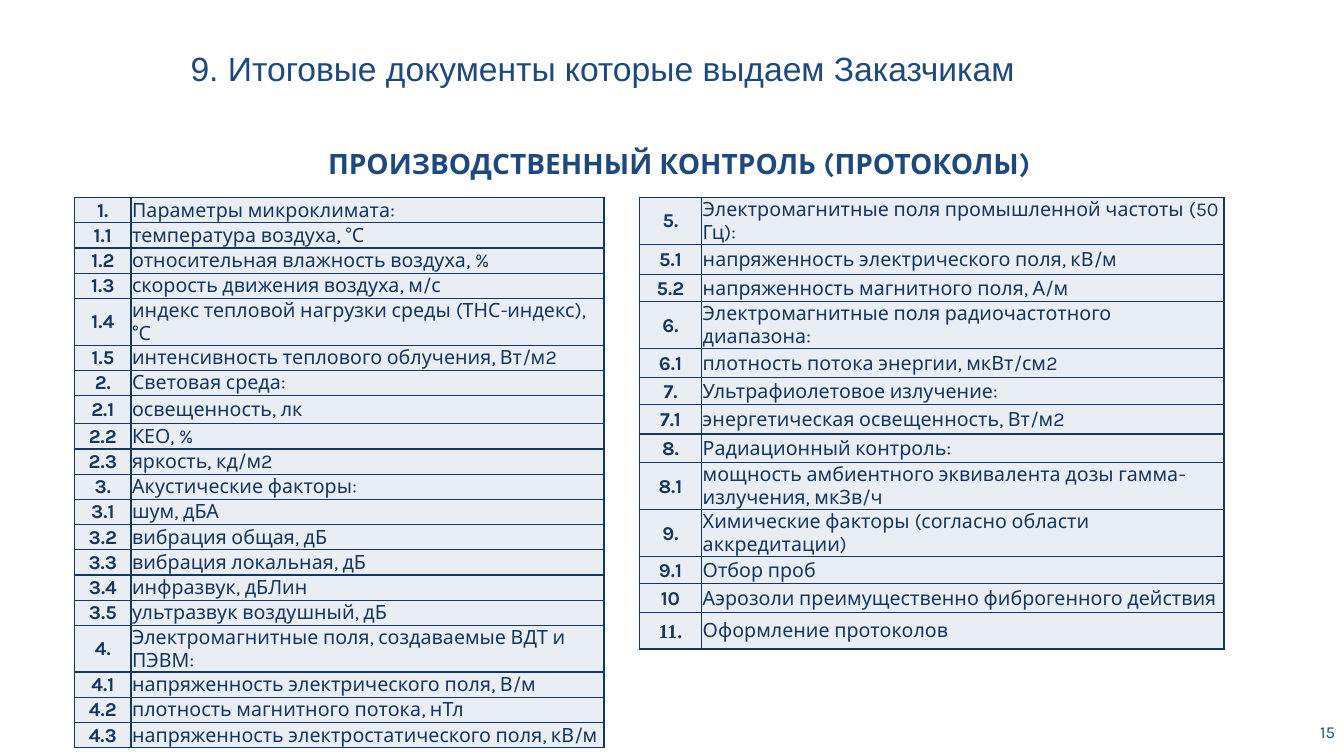
from dataclasses import dataclass

from lxml import etree
from pptx import Presentation, util as u
from pptx.dml.color import RGBColor
from pptx.enum import text as tx
from pptx.oxml.ns import qn

BLUE = RGBColor(0x1F, 0x49, 0x7D)
NAVY = RGBColor(0x17, 0x36, 0x5D)
PALE = RGBColor(0xE9, 0xED, 0xF4)
KARLA = "Karla"
MID, RIGHT = tx.PP_ALIGN.CENTER, tx.PP_ALIGN.RIGHT
LEFT = tx.PP_ALIGN.LEFT


@dataclass
class Row:
    num: str
    name: str
    high: float = 0.25
    face: str = KARLA


@dataclass
class Grid:
    left: float
    cols: tuple[float, float]
    rows: list[Row]


@dataclass
class Label:
    text: str
    box: tuple[float, float, float, float]
    size: int
    face: str = KARLA
    bold: bool = False
    align: int = LEFT
    lines: float = 1.0
    after: int = 0
    anchor: int = tx.MSO_ANCHOR.TOP


TITLE = Label("9. Итоговые документы которые выдаем Заказчикам",
              (1.79, 0.47, 11.48, 0.56), 24, "Arial", lines=0.89)
HEAD = Label("ПРОИЗВОДСТВЕННЫЙ КОНТРОЛЬ (ПРОТОКОЛЫ) ",
             (1.52, 1.46, 10.5, 0.41), 20, bold=True, align=MID,
             lines=0.84, after=2)
PAGE = Label("15", (11.59, 7.04, 1.75, 0.44), 12, align=RIGHT,
             anchor=tx.MSO_ANCHOR.MIDDLE)

GRIDS = [
    Grid(0.74, (0.56, 4.69), [
        Row("1.", "Параметры микроклимата:"),
        Row("1.1", "температура воздуха, °С"),
        Row("1.2", "относительная влажность воздуха, %"),
        Row("1.3", "скорость движения воздуха, м/с"),
        Row("1.4", "индекс тепловой нагрузки среды (ТНС-индекс), °С"),
        Row("1.5", "интенсивность теплового облучения, Вт/м2"),
        Row("2.", "Световая среда:"),
        Row("2.1", "освещенность, лк", 0.28),
        Row("2.2", "КЕО, %"),
        Row("2.3", "яркость, кд/м2"),
        Row("3.", "Акустические факторы:"),
        Row("3.1", "шум, дБА"),
        Row("3.2", "вибрация общая, дБ"),
        Row("3.3", "вибрация локальная, дБ"),
        Row("3.4", "инфразвук, дБЛин"),
        Row("3.5", "ультразвук воздушный, дБ"),
        Row("4.", "Электромагнитные поля, создаваемые ВДТ и ПЭВМ:"),
        Row("4.1", "напряженность электрического поля, В/м"),
        Row("4.2", "плотность магнитного потока, нТл"),
        Row("4.3", "напряженность электростатического поля, кВ/м"),
    ]),
    Grid(6.34, (0.62, 5.18), [
        Row("5.", "Электромагнитные поля промышленной частоты (50 Гц):"),
        Row("5.1", "напряженность электрического поля, кВ/м", 0.3),
        Row("5.2", "напряженность магнитного поля, А/м", 0.27),
        Row("6.", "Электромагнитные поля радиочастотного диапазона:", 0.26),
        Row("6.1", "плотность потока энергии, мкВт/см2", 0.29),
        Row("7.", "Ультрафиолетовое излучение:", 0.27),
        Row("7.1", "энергетическая освещенность, Вт/м2", 0.29),
        Row("8.", "Радиационный контроль:", 0.28),
        Row("8.1", "мощность амбиентного эквивалента дозы "
            "гамма-излучения, мкЗв/ч", 0.47),
        Row("9.", "Химические факторы (согласно области аккредитации)", 0.3),
        Row("9.1", "Отбор проб", 0.27),
        Row("10", "Аэрозоли преимущественно фиброгенного действия", 0.29),
        Row("11.", "Оформление протоколов", 0.36, "Times New Roman"),
    ]),
]


def put(obj, form: dict) -> None:
    for key, val in form.items():
        setattr(obj, key, val)


def style(para, size: int, face: str, bold: bool, color: RGBColor) -> None:
    put(para.font, {"size": u.Pt(size), "name": face, "bold": bold})
    para.font.color.rgb = color


def write(shape, label: Label) -> None:
    sides = ("left", "top", "width", "height")
    put(shape, {k: u.Inches(v) for k, v in zip(sides, label.box)})
    frame = shape.text_frame
    put(frame, {"text": label.text, "word_wrap": True,
                "auto_size": tx.MSO_AUTO_SIZE.NONE,
                "vertical_anchor": label.anchor})
    para = frame.paragraphs[0]
    put(para, {"alignment": label.align, "line_spacing": label.lines,
               "space_before": u.Pt(0), "space_after": u.Pt(label.after)})
    props = para._p.get_or_add_pPr()
    put_xml = {"marL": "0", "indent": "0"}
    for key, val in put_xml.items():
        props.set(key, val)
    etree.SubElement(props, qn("a:buNone"))
    style(para, label.size, label.face, label.bold, BLUE)


def edge(cell) -> None:
    props = cell._tc.get_or_add_tcPr()
    for side in "LRTB":
        line = etree.SubElement(props, qn(f"a:ln{side}"), w=str(u.Pt(1)))
        fill = etree.SubElement(line, qn("a:solidFill"))
        etree.SubElement(fill, qn("a:srgbClr"), val=str(NAVY))


def fill_cell(cell, words: str, face: str, bold: bool, align: int) -> None:
    thin = u.Inches(0.01)
    put(cell, {"text": words, "vertical_anchor": tx.MSO_ANCHOR.MIDDLE,
               "margin_left": thin, "margin_top": thin,
               "margin_right": thin, "margin_bottom": 0})
    edge(cell)
    cell.fill.solid()
    cell.fill.fore_color.rgb = PALE
    para = cell.text_frame.paragraphs[0]
    para.alignment = align
    style(para, 14, face, bold, NAVY)


def draw(slide, grid: Grid) -> None:
    box = (grid.left, 1.96, sum(grid.cols), sum(r.high for r in grid.rows))
    table = slide.shapes.add_table(
        len(grid.rows), 2, *map(u.Inches, box)).table
    put(table, {"first_row": False, "horz_banding": False})
    for col, wide in zip(table.columns, grid.cols):
        col.width = u.Inches(wide)
    for i, row in enumerate(grid.rows):
        table.rows[i].height = u.Inches(row.high)
        fill_cell(table.cell(i, 0), row.num, row.face, True, MID)
        fill_cell(table.cell(i, 1), row.name, KARLA, False, LEFT)


def main() -> None:
    deck = Presentation()
    put(deck, {"slide_width": u.Inches(13.33), "slide_height": u.Inches(7.5)})
    slide = deck.slides.add_slide(deck.slide_layouts[1])

    # Title and heading
    write(slide.shapes.title, TITLE)
    write(slide.placeholders[1], HEAD)

    # Lists of protocols
    for grid in GRIDS:
        draw(slide, grid)

    # Page number
    write(slide.shapes.add_textbox(0, 0, 0, 0), PAGE)
    deck.save("out.pptx")


if __name__ == "__main__":
    main()
